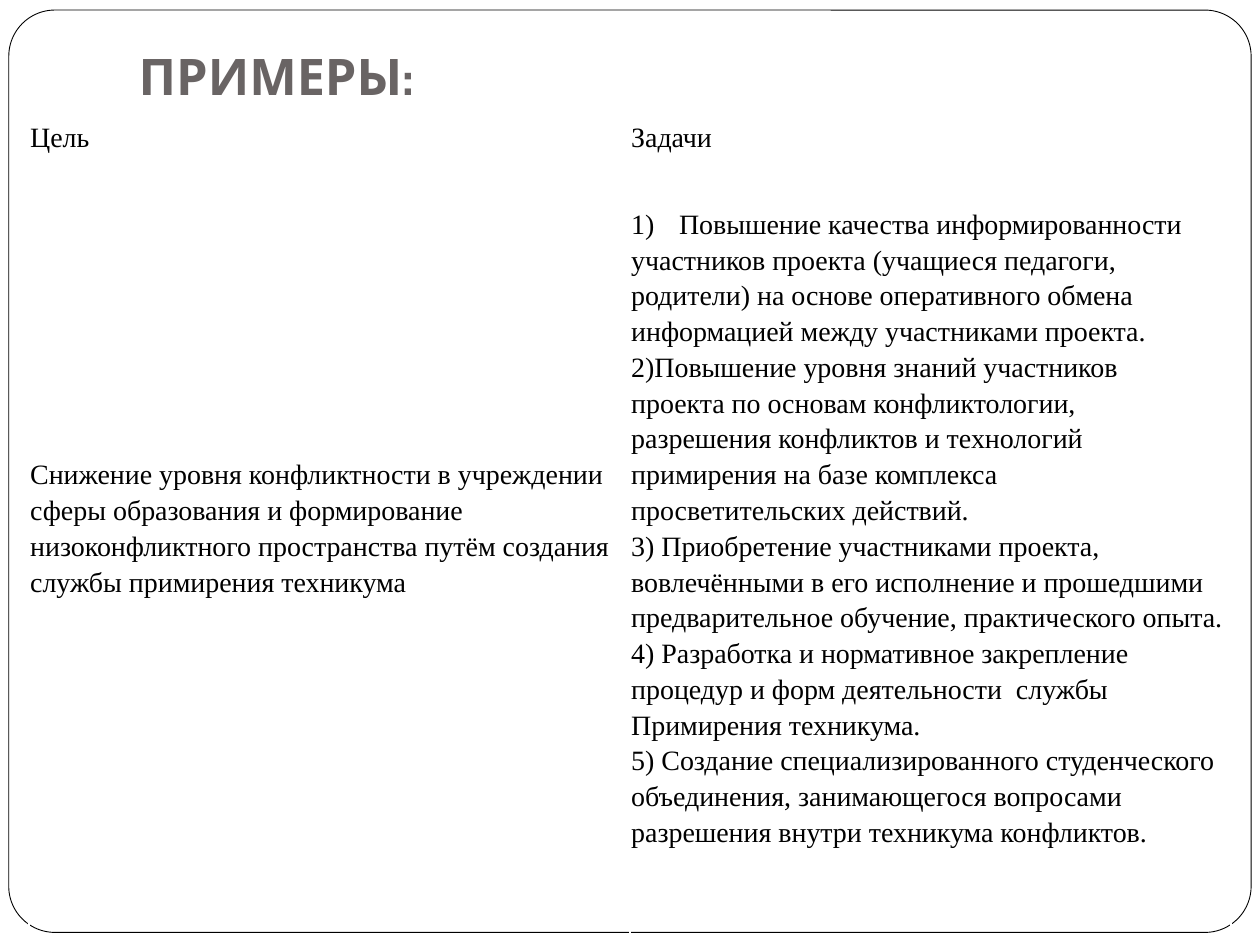
import dataclasses

import pptx
import pptx.dml.color
import pptx.enum.shapes
import pptx.enum.text
import pptx.oxml.ns
import pptx.util
from lxml import etree

Inches = pptx.util.Inches
Anchor = pptx.enum.text.MSO_ANCHOR


@dataclasses.dataclass(frozen=True)
class Theme:
    paper: str = "FFFFFF"
    ink: str = "000000"
    heading: str = "696464"
    title_font: str = "Cabin"
    body_font: str = "Times New Roman"
    title_size: float = 28.8
    body_size: float = 16
    frame_width: float = 0.5
    line_spacing: float = 1.15


THEME = Theme()

GOAL = (
    "Снижение уровня конфликтности в учреждении сферы образования и "
    "формирование низоконфликтного пространства путём создания "
    "службы примирения техникума"
)
TASKS = [
    "Повышение качества информированности",
    "участников проекта (учащиеся педагоги,",
    "родители) на основе оперативного обмена",
    "информацией между участниками проекта.",
    "2)Повышение уровня знаний участников",
    "проекта по основам конфликтологии,",
    "разрешения конфликтов и технологий",
    "примирения на базе комплекса",
    "просветительских действий.",
    "3) Приобретение участниками проекта,",
    "вовлечёнными в его исполнение и прошедшими",
    "предварительное обучение, практического опыта.",
    "4) Разработка и нормативное закрепление",
    "процедур и форм деятельности  службы",
    "Примирения техникума.",
    "5) Создание специализированного студенческого",
    "объединения, занимающегося вопросами",
    "разрешения внутри техникума конфликтов.",
]
ROWS = [(["Цель"], ["Задачи"]), ([GOAL], TASKS), ([], [])]
ROW_HEIGHTS = [0.44, 5.76, 0.44]
COLUMN_WIDTH = 4.77


def color(value):
    return pptx.dml.color.RGBColor.from_string(value)


def write_text(paragraph, text, *, font=THEME.body_font, size=THEME.body_size,
               fill=THEME.ink, bold=False, spacing=THEME.line_spacing):
    paragraph.alignment = pptx.enum.text.PP_ALIGN.LEFT
    paragraph.line_spacing = spacing
    run = paragraph.add_run()
    run.text = text
    run.font.name = font
    run.font.size = pptx.util.Pt(size)
    run.font.bold = bold
    run.font.color.rgb = color(fill)


def set_margins(holder, left, top, right, bottom):
    holder.margin_left, holder.margin_top = Inches(left), Inches(top)
    holder.margin_right, holder.margin_bottom = Inches(right), Inches(bottom)


def number_paragraph(paragraph):
    """Give a paragraph a hanging automatic number such as 1)."""
    properties = paragraph._p.get_or_add_pPr()
    properties.set("marL", str(Inches(0.38)))
    properties.set("indent", str(Inches(-0.38)))
    etree.SubElement(properties, pptx.oxml.ns.qn("a:buAutoNum"), type="arabicParenR")


def add_title(slide, text):
    title = slide.shapes.title
    title.left, title.top = Inches(1), Inches(0.3)
    title.width, title.height = Inches(8.5), Inches(0.64)
    frame = title.text_frame
    frame.word_wrap = True
    frame.auto_size = pptx.enum.text.MSO_AUTO_SIZE.NONE
    frame.vertical_anchor = Anchor.BOTTOM
    set_margins(frame, 0.1, 0.05, 0.1, 0.1)
    write_text(frame.paragraphs[0], text, font=THEME.title_font,
               size=THEME.title_size, fill=THEME.heading, bold=True, spacing=1.0)


def add_border(slide):
    border = slide.shapes.add_shape(
        pptx.enum.shapes.MSO_SHAPE.ROUNDED_RECTANGLE,
        Inches(0.07), Inches(0.08), Inches(9.86), Inches(7.32))
    border.adjustments[0] = 0.05
    border.shadow.inherit = False
    border.fill.solid()
    border.fill.fore_color.rgb = color(THEME.paper)
    border.line.color.rgb = color(THEME.ink)
    border.line.width = pptx.util.Pt(THEME.frame_width)
    # Keep the border behind the title
    slide.shapes.title._element.addprevious(border._element)


def fill_cell(cell, lines):
    cell.fill.background()
    cell.vertical_anchor = Anchor.MIDDLE
    set_margins(cell, 0.01, 0.01, 0.01, 0.01)
    frame = cell.text_frame
    for index, line in enumerate(lines):
        paragraph = frame.add_paragraph() if index else frame.paragraphs[0]
        write_text(paragraph, line)


def add_goal_table(slide):
    table = slide.shapes.add_table(
        len(ROWS), 2, Inches(0.23), Inches(0.86),
        Inches(2 * COLUMN_WIDTH), Inches(sum(ROW_HEIGHTS))).table
    table.first_row = table.horz_banding = False
    for column in table.columns:
        column.width = Inches(COLUMN_WIDTH)
    for row, height, contents in zip(table.rows, ROW_HEIGHTS, ROWS):
        row.height = Inches(height)
        for cell, lines in zip(row.cells, contents):
            fill_cell(cell, lines)
    number_paragraph(table.cell(1, 1).text_frame.paragraphs[0])


def main():
    presentation = pptx.Presentation()
    presentation.slide_width, presentation.slide_height = Inches(10), Inches(7.5)
    slide = presentation.slides.add_slide(presentation.slide_layouts[5])

    # Border and heading
    add_border(slide)
    add_title(slide, "ПРИМЕРЫ:")

    # Goal and tasks
    add_goal_table(slide)
    presentation.save("out.pptx")


if __name__ == "__main__":
    main()
